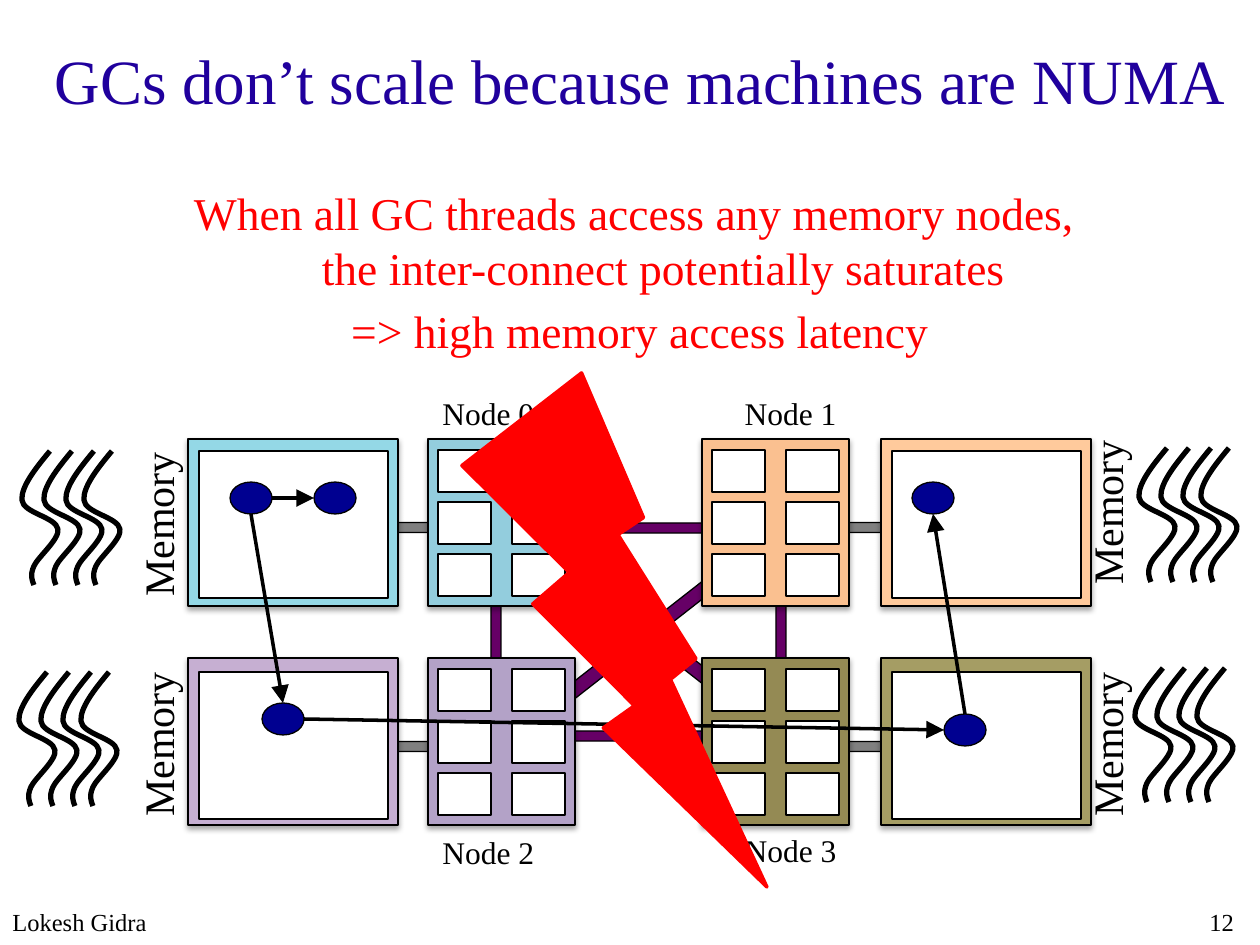
"""Build a slide on why garbage collectors do not scale on NUMA machines."""
import pptx
import pptx.util
import pptx.dml.color
import pptx.enum.shapes
import pptx.enum.text
from lxml import etree

PX = 914400 / 126
FONT = "Times New Roman"
COLORS = {
    "title": "20009D", "alert": "FF0000", "ink": "000000", "paper": "FFFFFF",
    "bus": "808080", "interconnect": "660066", "object": "000090",
}
TITLE = "GCs don’t scale because machines are NUMA"
MESSAGE = [
    "When all GC threads access any memory nodes, \vthe inter-connect potentially saturates",
    "=> high memory access latency",
]
NODES = [
    {"name": "Node 0", "chip": (428, 439), "chip_fill": "93CDDD", "memory": (188, 439),
     "memory_fill": "94D8E6", "heap": (199, 451), "label": (430, 388),
     "memory_label": (63, 493), "threads": (50, 451)},
    {"name": "Node 1", "chip": (702, 439), "chip_fill": "FAC090", "memory": (881, 439),
     "memory_fill": "FFCA9C", "heap": (892, 451), "label": (723, 388),
     "memory_label": (1012, 481), "threads": (1167, 448)},
    {"name": "Node 2", "chip": (428, 658), "chip_fill": "B3A2C7", "memory": (188, 658),
     "memory_fill": "C6AFD2", "heap": (199, 672), "label": (430, 827),
     "memory_label": (63, 713), "threads": (47, 672)},
    {"name": "Node 3", "chip": (702, 658), "chip_fill": "948A54", "memory": (881, 658),
     "memory_fill": "A59D64", "heap": (892, 672), "label": (723, 825),
     "memory_label": (1012, 713), "threads": (1163, 668)},
]
BUSES = [(859, 491), (407, 491), (859, 710), (407, 710)]
INTERCONNECTS = [
    (638, 460, 14, 350, 52), (633, 451, 14, 350, 308),
    (639, 657, 10, 158, 270), (776, 596, 10, 93, 0),
    (491, 585, 10, 93, 0), (639, 449, 10, 158, 270),
]
OBJECT_SIZE = (42, 32)
OBJECTS = {"root": (230, 482), "sibling": (314, 482), "child": (262, 703),
           "remote": (944, 714), "last": (912, 482)}
SIDES = {"top": (0.5, 0), "left": (0, 0.5), "bottom": (0.5, 1), "right": (1, 0.5)}
REFERENCES = [
    ("root", "right", "sibling", "left"), ("root", "bottom", "child", "top"),
    ("child", "right", "remote", "left"), ("remote", "top", "last", "bottom"),
]
THREAD_OFFSETS = [0, 22, 44, 62]
THREAD_CURVE = [
    (0, 0), (-15, 18), (-29, 36), (-28, 49), (-27, 62), (6, 66), (8, 78),
    (10, 88), (-12, 106), (-16, 115), (-20, 124), (-18, 129), (-16, 134),
]
SHAPES = pptx.enum.shapes.MSO_SHAPE
ALIGN = pptx.enum.text.PP_ALIGN
ANCHOR = pptx.enum.text.MSO_ANCHOR


def emu(*lengths):
    return [round(length * PX) for length in lengths]


def rgb(name):
    return pptx.dml.color.RGBColor.from_string(COLORS.get(name, name))


def draw_xml(parent, tag, **attributes):
    namespace = "http://schemas.openxmlformats.org/drawingml/2006/main"
    return etree.SubElement(parent, f"{{{namespace}}}{tag}", attributes)


def set_line(shape, color="ink", width=0.75):
    shape.line.color.rgb = rgb(color)
    shape.line.width = pptx.util.Pt(width)


def add_shape(slide, kind, box, fill, line="ink", width=0.75, rotation=0):
    shape = slide.shapes.add_shape(kind, *emu(*box))
    shape.shadow.inherit = False
    shape.fill.solid()
    shape.fill.fore_color.rgb = rgb(fill)
    set_line(shape, line, width)
    shape.rotation = rotation
    return shape


def add_shadow(shape):
    effects = shape.element.spPr.find("{*}effectLst")
    shadow = draw_xml(effects, "outerShdw", blurRad="40000", dist="23000",
                      dir="5400000", rotWithShape="0")
    color = draw_xml(shadow, "srgbClr", val=COLORS["ink"])
    draw_xml(color, "alpha", val="35000")


def set_text(shape, lines, size, color="ink", align=ALIGN.LEFT, anchor=ANCHOR.TOP):
    frame = shape.text_frame
    frame.word_wrap = True
    frame.vertical_anchor = anchor
    frame.text = "\n".join(lines)
    for paragraph in frame.paragraphs:
        paragraph.alignment = align
        paragraph.font.name = FONT
        paragraph.font.size = pptx.util.Pt(size)
        paragraph.font.color.rgb = rgb(color)


def add_text(slide, box, lines, size, **style):
    text_box = slide.shapes.add_textbox(*emu(*box))
    set_text(text_box, lines, size, **style)
    return text_box


def add_message(slide):
    message = add_text(slide, (20, 179, 1240, 709), MESSAGE, 26, color="alert", align=ALIGN.CENTER)
    for paragraph in message.text_frame.paragraphs:
        paragraph.space_before = pptx.util.Pt(5.2)
        properties = paragraph._p.get_or_add_pPr()
        properties.set("marL", "342900")
        properties.set("indent", "-342900")


def add_node(slide, node):
    add_shadow(add_shape(slide, SHAPES.RECTANGLE, (*node["memory"], 210, 167), node["memory_fill"]))
    add_shape(slide, SHAPES.RECTANGLE, (*node["heap"], 189, 147), "paper")
    left, top = node["chip"]
    add_shadow(add_shape(slide, SHAPES.RECTANGLE, (left, top, 147, 167), node["chip_fill"]))
    for row in range(3):
        for column in range(2):
            core = (left + 10 + 74 * column, top + 11 + 52 * row, 53, 42)
            add_shape(slide, SHAPES.RECTANGLE, core, "paper")
    align = ALIGN.LEFT if left < 630 else ALIGN.RIGHT
    add_text(slide, (*node["label"], 126, 50), [node["name"]], 18, align=align)
    memory_label = add_text(slide, (*node["memory_label"], 189, 63), ["Memory"], 24, align=ALIGN.CENTER)
    memory_label.rotation = 270


def anchor_point(name, side):
    return [start + size * part for start, size, part in zip(OBJECTS[name], OBJECT_SIZE, SIDES[side])]


def add_reference(slide, source, source_side, target, target_side):
    ends = anchor_point(source, source_side) + anchor_point(target, target_side)
    connector = slide.shapes.add_connector(pptx.enum.shapes.MSO_CONNECTOR.STRAIGHT, *emu(*ends))
    set_line(connector, width=2)
    draw_xml(connector.line._get_or_add_ln(), "tailEnd", type="triangle", w="lg", len="lg")
    draw_xml(connector.element.spPr, "effectLst")


def add_thread(slide, left, top):
    points = [emu(left + x, top + y) for x, y in THREAD_CURVE]
    builder = slide.shapes.build_freeform(*points[0])
    builder.add_line_segments(points[1:], close=False)
    thread = builder.convert_to_shape()
    thread.shadow.inherit = False
    thread.fill.background()
    set_line(thread, width=3)
    segments = thread.element.findall(".//{*}lnTo")
    outline = segments[0].getparent()
    for start in range(0, len(segments), 3):
        curve = draw_xml(outline, "cubicBezTo")
        for segment in segments[start:start + 3]:
            curve.append(segment[0])
            outline.remove(segment)


def main():
    presentation = pptx.Presentation()
    presentation.slide_width, presentation.slide_height = emu(1260, 945)
    slide = presentation.slides.add_slide(presentation.slide_layouts[5])
    title = slide.shapes.title
    title.left, title.top, title.width, title.height = emu(42, 0, 1218, 158)
    set_text(title, [TITLE], 36, color="title", anchor=ANCHOR.MIDDLE)
    add_message(slide)
    for left, top in BUSES:
        add_shape(slide, SHAPES.CAN, (left, top, 10, 73), "bus", rotation=270)
    for *box, rotation in INTERCONNECTS:
        add_shape(slide, SHAPES.CAN, box, "interconnect", rotation=rotation)
    for node in NODES:
        add_node(slide, node)
    for position in OBJECTS.values():
        add_shape(slide, SHAPES.OVAL, (*position, *OBJECT_SIZE), "object")
    for reference in REFERENCES:
        add_reference(slide, *reference)
    for node in NODES:
        left, top = node["threads"]
        for offset in THREAD_OFFSETS:
            add_thread(slide, left + offset, top)
    add_shape(slide, SHAPES.LIGHTNING_BOLT, (462, 373, 305, 514), "alert", line="alert", width=2)
    add_text(slide, (0, 898, 771, 47), ["Lokesh Gidra"], 14, anchor=ANCHOR.MIDDLE)
    add_text(slide, (1197, 898, 63, 47), ["12"], 14, anchor=ANCHOR.MIDDLE)
    presentation.save("out.pptx")


if __name__ == "__main__":
    main()
